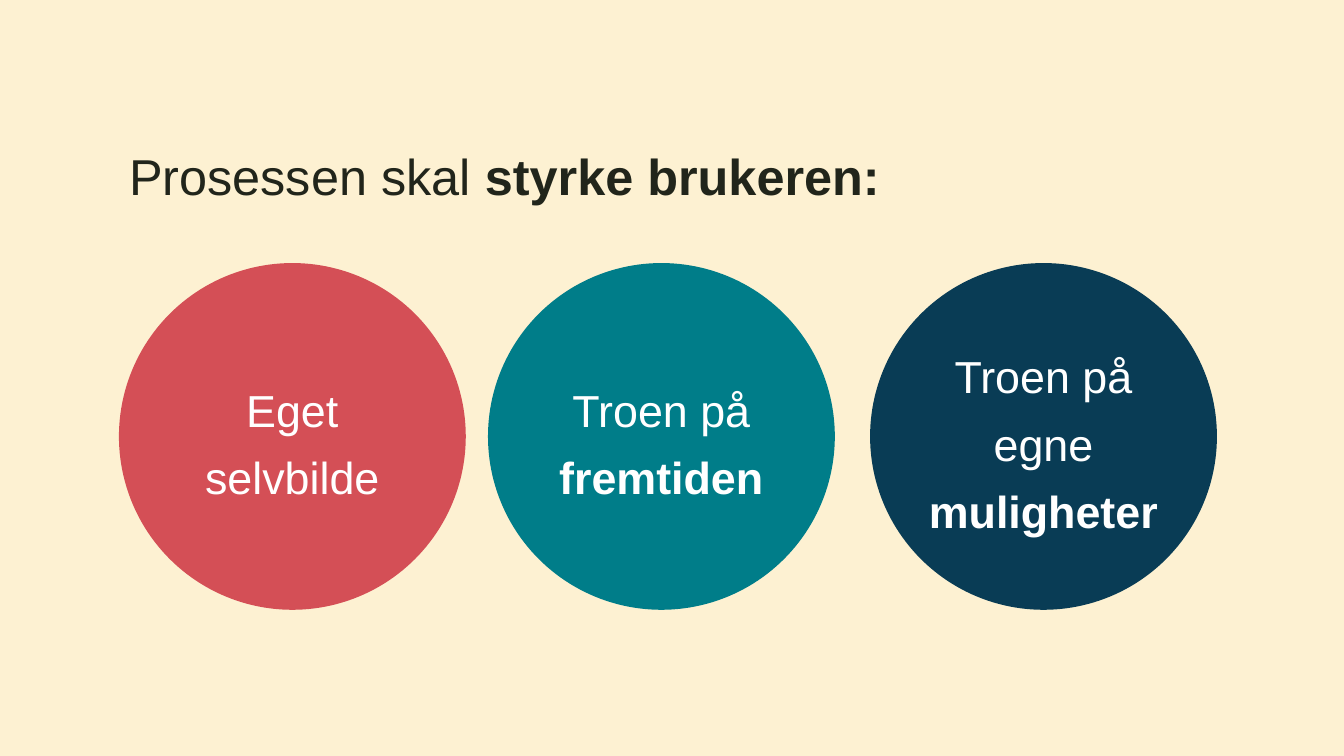
from dataclasses import dataclass

from pptx import Presentation
from pptx.dml.color import RGBColor
from pptx.enum.shapes import MSO_SHAPE
from pptx.enum.text import MSO_ANCHOR, MSO_AUTO_SIZE, PP_ALIGN
from pptx.util import Inches, Pt


@dataclass(frozen=True)
class Theme:
    font: str = "Arial"
    cream: str = "FDF1D2"
    ink: str = "21251B"
    white: str = "FFFFFF"
    red: str = "D44F56"
    teal: str = "007D89"
    navy: str = "093C55"
    title_size: int = 36
    circle_size: int = 32


THEME = Theme()
DIAMETER = 3.44
CIRCLE_TOP = 2.61
CIRCLES = [
    (1.18, THEME.red, [("Eget selvbilde", False)]),
    (4.84, THEME.teal, [("Troen på ", False), ("fremtiden", True)]),
    (8.63, THEME.navy, [("Troen på egne ", False), ("muligheter", True)]),
]


def write_text(tf, runs, *, size, color, align, spacing, inset=(0.1, 0.05)):
    """Fill a text frame with one paragraph of (text, bold) runs."""
    tf.word_wrap = True
    tf.auto_size = MSO_AUTO_SIZE.NONE
    tf.vertical_anchor = MSO_ANCHOR.MIDDLE
    tf.margin_left = tf.margin_right = Inches(inset[0])
    tf.margin_top = tf.margin_bottom = Inches(inset[1])
    p = tf.paragraphs[0]
    p.alignment = align
    p.line_spacing = spacing
    p.space_before = Pt(0)
    for text, bold in runs:
        r = p.add_run()
        r.text = text
        r.font.name = THEME.font
        r.font.size = Pt(size)
        r.font.bold = bold
        r.font.color.rgb = RGBColor.from_string(color)


def place_title(s, x, y, w, h):
    title = s.shapes.title
    title.left, title.top = Inches(x), Inches(y)
    title.width, title.height = Inches(w), Inches(h)
    write_text(title.text_frame,
               [("Prosessen skal ", False), ("styrke brukeren:", True)],
               size=THEME.title_size, color=THEME.ink,
               align=PP_ALIGN.LEFT, spacing=0.9)


def add_circle(s, x, y, diameter, color, runs):
    sp = s.shapes.add_shape(MSO_SHAPE.OVAL, Inches(x), Inches(y),
                            Inches(diameter), Inches(diameter))
    sp.shadow.inherit = False
    sp.fill.solid()
    sp.fill.fore_color.rgb = RGBColor.from_string(color)
    sp.line.fill.background()
    write_text(sp.text_frame, runs, size=THEME.circle_size, color=THEME.white,
               align=PP_ALIGN.CENTER, spacing=1.25, inset=(0, 0))


def build_slide(prs):
    s = prs.slides.add_slide(prs.slide_layouts.get_by_name("Title Only"))
    s.background.fill.solid()
    s.background.fill.fore_color.rgb = RGBColor.from_string(THEME.cream)
    place_title(s, 1.18, 1.49, 11.43, 0.57)
    for x, color, runs in CIRCLES:
        add_circle(s, x, CIRCLE_TOP, DIAMETER, color, runs)


def main():
    prs = Presentation()
    prs.slide_width, prs.slide_height = Inches(13.33), Inches(7.5)
    build_slide(prs)
    prs.save("out.pptx")


if __name__ == "__main__":
    main()
